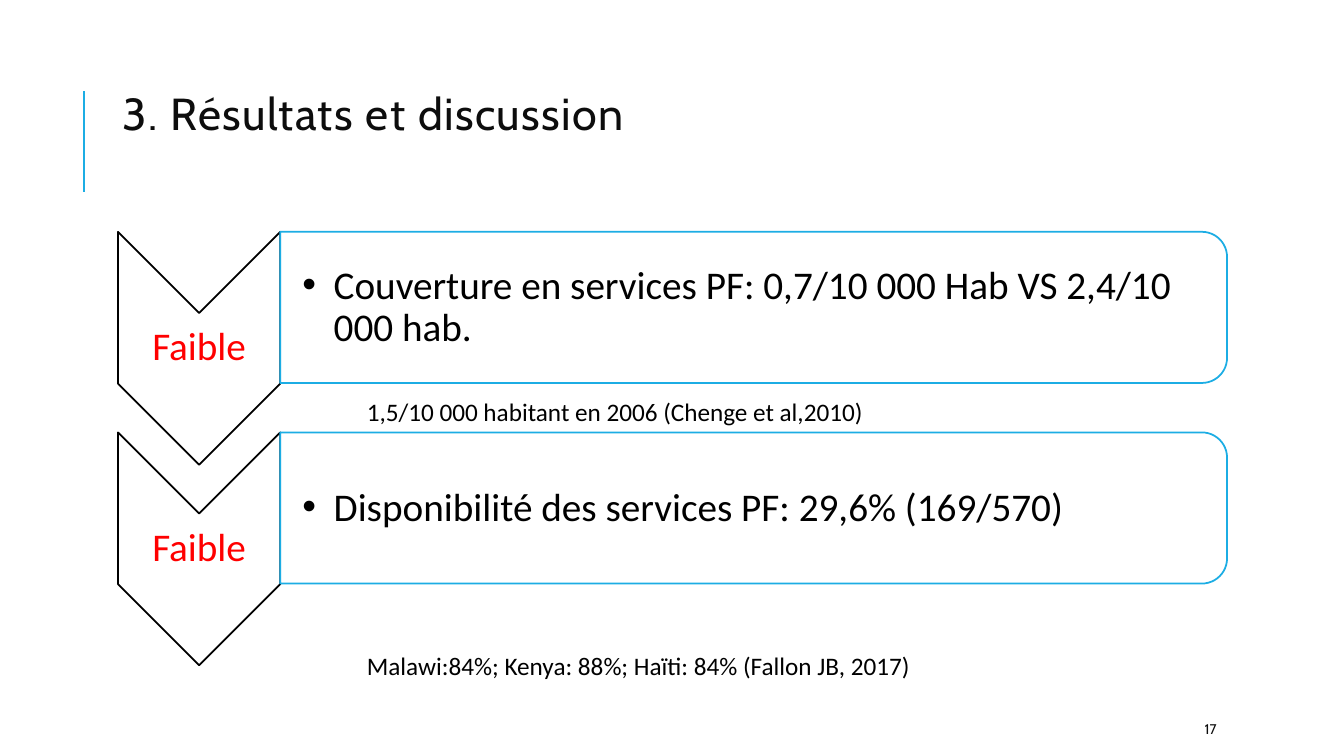
"""Build the results slide with two chevron rows and their reference notes."""
import pptx
import pptx.util
import pptx.dml.color
import pptx.enum.shapes
import pptx.enum.text
import pptx.oxml.ns
from lxml import etree

Inches = pptx.util.Inches
Pt = pptx.util.Pt
Shape = pptx.enum.shapes.MSO_SHAPE
Align = pptx.enum.text.PP_ALIGN
Anchor = pptx.enum.text.MSO_ANCHOR
qn = pptx.oxml.ns.qn

COLORS = {"white": "FFFFFF", "black": "000000", "ink": "0D0D0D",
          "blue": "1CADE4", "red": "FF0000"}
ROWS = [
    ("Faible", "Couverture en services PF: 0,7/10 000 Hab VS 2,4/10 000 hab."),
    ("Faible", "Disponibilité des services PF: 29,6% (169/570)"),
]
NOTES = [
    (3.88, 5.79, "1,5/10 000 habitant en 2006 (Chenge et al,2010)"),
    (6.4, 9.02, "Malawi:84%; Kenya: 88%; Haïti: 84% (Fallon JB, 2017)"),
]
TOP, STEP = 2.3, 1.99
LEFT, SPLIT = 1.17, 2.78
TIP, BAR, WIDE = 2.31, 1.5, 9.39


def rgb(name):
    return pptx.dml.color.RGBColor.from_string(COLORS[name])


def add_text(slide, box, text, size, color="black", font="Calibri",
             anchor=Anchor.MIDDLE, insets=None, spacing=None):
    shape = slide.shapes.add_textbox(*map(Inches, box))
    frame = shape.text_frame
    frame.word_wrap = True
    frame.vertical_anchor = anchor
    if insets:
        (frame.margin_left, frame.margin_top,
         frame.margin_right, frame.margin_bottom) = map(Inches, insets)
    para = frame.paragraphs[0]
    para.text = text
    para.font.size = Pt(size)
    para.font.name = font
    para.font.color.rgb = rgb(color)
    if spacing:
        para.line_spacing = spacing
    return para


def add_turned(slide, kind, left, top, width, height, line):
    """Add a white shape turned by 90 degrees that fills the given area."""
    shift = (width - height) / 2
    shape = slide.shapes.add_shape(kind, Inches(left + shift), Inches(top - shift),
                                   Inches(height), Inches(width))
    shape.rotation = 90
    shape.shadow.inherit = False
    shape.fill.solid()
    shape.fill.fore_color.rgb = rgb("white")
    shape.line.color.rgb = rgb(line)
    shape.line.width = Pt(1.25)
    return shape


def add_bullet(para):
    props = para._p.get_or_add_pPr()
    props.set("marL", str(Inches(0.31)))
    props.set("indent", str(-Inches(0.31)))
    etree.SubElement(props, qn("a:buFont")).set("typeface", "Arial")
    etree.SubElement(props, qn("a:buChar")).set("char", "•")


def add_row(slide, top, label, text):
    add_turned(slide, Shape.CHEVRON, LEFT, top, SPLIT - LEFT, TIP, "black")
    para = add_text(slide, (LEFT, top + 0.81, SPLIT - LEFT, 0.69), label, 28,
                    "red", insets=(0.02,) * 4, spacing=0.9)
    para.alignment = Align.CENTER
    bar = add_turned(slide, Shape.ROUND_2_SAME_RECTANGLE, SPLIT, top, WIDE, BAR, "blue")
    tint = bar._element.spPr.find(qn("a:solidFill"))[0]
    etree.SubElement(tint, qn("a:alpha")).set("val", "90000")
    para = add_text(slide, (SPLIT, top + 0.08, 9.31, 1.35), text, 28,
                    insets=(0.22, 0.02, 0.02, 0.02), spacing=0.9)
    add_bullet(para)


def add_rule(slide):
    rule = slide.shapes.add_connector(
        pptx.enum.shapes.MSO_CONNECTOR.STRAIGHT,
        Inches(0.83), Inches(1.9), Inches(0.83), Inches(0.9))
    rule.line.color.rgb = rgb("blue")
    rule.line.width = Pt(1.5)
    etree.SubElement(rule._element.spPr, qn("a:effectLst"))


def main():
    deck = pptx.Presentation()
    deck.slide_width, deck.slide_height = Inches(13.33), Inches(7.5)
    slide = deck.slides.add_slide(deck.slide_layouts[6])
    add_rule(slide)
    for index, (label, text) in enumerate(ROWS):
        add_row(slide, TOP + index * STEP, label, text)
    add_text(slide, (11.85, 7.08, 1.06, 0.3), "17", 10, "ink", "Cabin")
    title = add_text(slide, (1.12, 0.64, 10.63, 1.05), "3. Résultats et discussion",
                     32, "ink", "Cabin", spacing=0.8)
    title.runs[0]._r.get_or_add_rPr().set("spc", "100")
    for top, width, text in NOTES:
        add_text(slide, (3.54, top, width, 0.4), text, 18, anchor=Anchor.TOP)
    deck.save("out.pptx")


if __name__ == "__main__":
    main()
